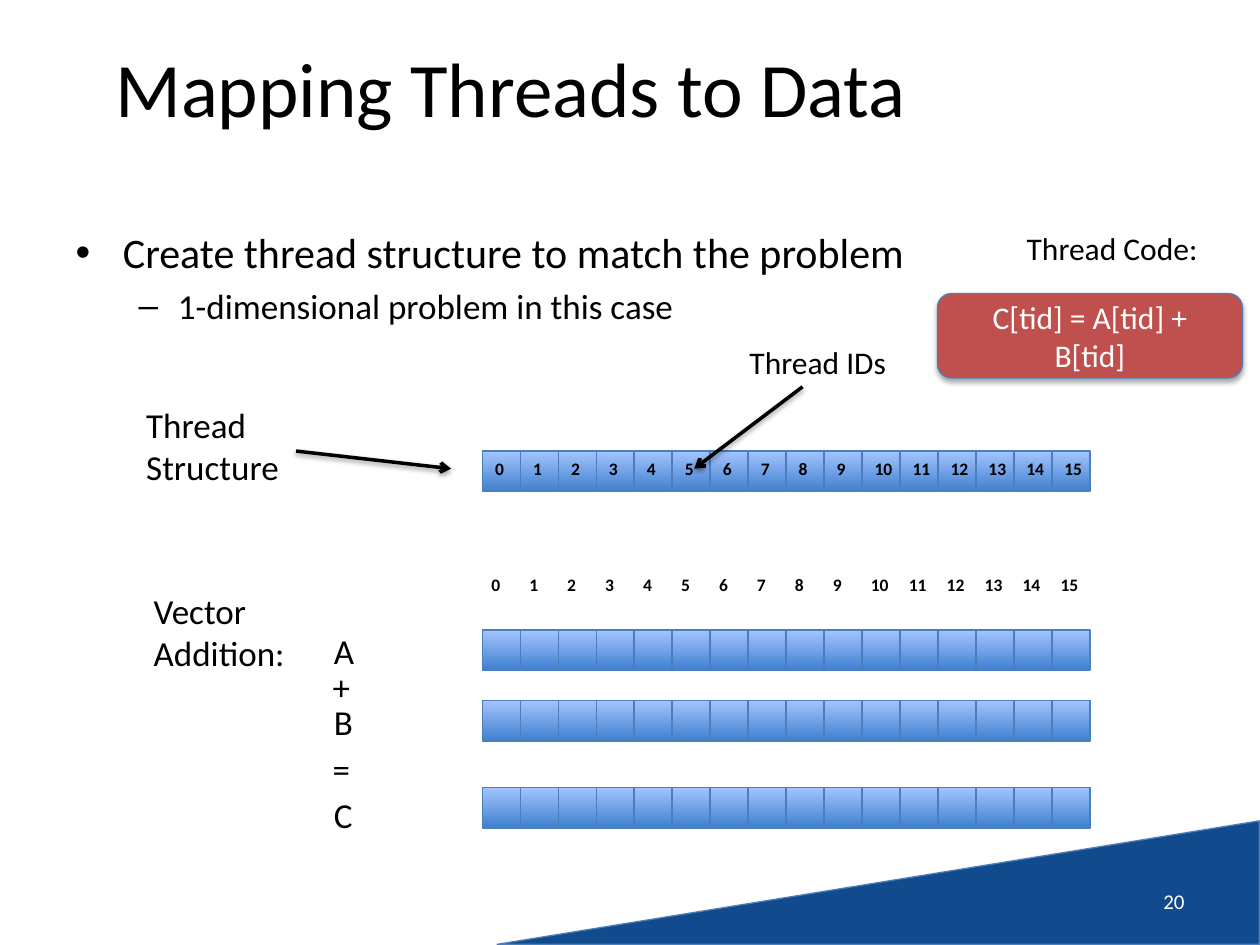
import pptx
import pptx.dml.color
import pptx.enum.shapes
import pptx.enum.text
import pptx.oxml
import pptx.oxml.ns
import pptx.util
from pptx.util import Inches

RGBColor = pptx.dml.color.RGBColor
ShapeType = pptx.enum.shapes.MSO_SHAPE
Align = pptx.enum.text.PP_ALIGN
Anchor = pptx.enum.text.MSO_ANCHOR
AutoSize = pptx.enum.text.MSO_AUTO_SIZE

# Content
TITLE = "Mapping Threads to Data"
BULLETS = [  # text, level, size
    ("Create thread structure to match the problem", 0, 24),
    ("1-dimensional problem in this case", 1, 20),
]
THREAD_COUNT = 16
THREAD_CODE = "C[tid] = A[tid] + B[tid]"
SLIDE_NUMBER = "20"
WRAPPED_LABELS = [  # text, left, top, width
    ("Thread Structure", 1.09, 3.16, 1.51),
    ("Vector Addition:", 1.15, 4.64, 1.74),
]
OPERANDS = [  # text, left, top
    ("A", 2.58, 4.96),
    ("+", 2.57, 5.24),
    ("B", 2.58, 5.52),
    ("=", 2.57, 5.89),
    ("C", 2.58, 6.26),
]
CAPTIONS = [  # text, left, top, width
    ("Thread IDs", 5.85, 2.67, 1.3),
    ("Thread Code:", 8.05, 1.77, 1.57),
]
ARROWS = [((2.35, 3.58), (3.58, 3.72)), ((6.37, 3.07), (5.51, 3.72))]

# Vectors: one thread row and three data rows on the same columns
ROW_LEFT, ROW_WIDTH, CELL_HEIGHT = 3.83, 4.82, 0.32
CELL_WIDTH = ROW_WIDTH / THREAD_COUNT
ROW_TOPS = [3.58, 5.0, 5.56, 6.25]
INDEX_TABLES = [(3.83, 4.52), (3.86, 3.6)]
NO_GRID_STYLE = "{2D5ABB26-0587-4C30-8999-92F81FD0307C}"

FONT = "Calibri"
BLACK = RGBColor(0x00, 0x00, 0x00)
WHITE = RGBColor(0xFF, 0xFF, 0xFF)
NAVY = RGBColor(0x11, 0x4B, 0x8E)
OUTLINE = RGBColor(0x4B, 0x7E, 0xBC)
CELL_DARK = RGBColor(0x3F, 0x80, 0xCE)
CELL_LIGHT = RGBColor(0xA4, 0xC4, 0xFF)
RED = RGBColor(0xC0, 0x50, 0x4D)


def format_text(paragraph, size, color=BLACK, bold=None, align=None):
    font = paragraph.runs[0].font
    font.name, font.size, font.bold = FONT, pptx.util.Pt(size), bold
    font.color.rgb = color
    if align is not None:
        paragraph.alignment = align


def set_small_margins(target):
    target.margin_left = target.margin_right = Inches(0.07)
    target.margin_top = target.margin_bottom = Inches(0.04)


def add_text(slide, text, left, top, width, height, size, wrap=False):
    box = slide.shapes.add_textbox(Inches(left), Inches(top), Inches(width), Inches(height))
    box.text_frame.text = text
    box.text_frame.word_wrap = wrap
    format_text(box.text_frame.paragraphs[0], size)
    return box


def add_shadow(shape, opacity, distance):
    for old in shape._element.spPr.findall(pptx.oxml.ns.qn("a:effectLst")):
        shape._element.spPr.remove(old)
    shape._element.spPr.append(pptx.oxml.parse_xml(
        f'<a:effectLst {pptx.oxml.ns.nsdecls("a")}>'
        f'<a:outerShdw blurRad="{pptx.util.Pt(3.1)}" dist="{pptx.util.Pt(distance)}" '
        'dir="5400000" rotWithShape="0"><a:srgbClr val="000000">'
        f'<a:alpha val="{opacity * 1000}"/></a:srgbClr></a:outerShdw></a:effectLst>'))


def add_solid_shape(slide, kind, left, top, width, height, color):
    shape = slide.shapes.add_shape(kind, Inches(left), Inches(top), Inches(width), Inches(height))
    shape.fill.solid()
    shape.fill.fore_color.rgb = color
    shape.line.color.rgb = OUTLINE
    shape.line.width = pptx.util.Pt(0.75)
    add_shadow(shape, 35, 1.8)
    return shape


def add_vector(slide, top):
    group = slide.shapes.add_group_shape()
    for column in range(THREAD_COUNT):
        cell = group.shapes.add_shape(
            ShapeType.RECTANGLE, Inches(ROW_LEFT + column * CELL_WIDTH), Inches(top),
            Inches(CELL_WIDTH), Inches(CELL_HEIGHT))
        cell.shadow.inherit = False
        cell.fill.gradient()
        cell.fill.gradient_angle = 90
        for stop, color in zip(cell.fill.gradient_stops, (CELL_DARK, CELL_LIGHT)):
            stop.color.rgb = color
        cell.line.color.rgb = OUTLINE
        cell.line.width = pptx.util.Pt(1)


def add_index_table(slide, left, top):
    table = slide.shapes.add_table(1, THREAD_COUNT, Inches(left), Inches(top),
                                   Inches(ROW_WIDTH), Inches(0.3)).table
    table.first_row = table.horz_banding = False
    table._tbl.tblPr.find(pptx.oxml.ns.qn("a:tableStyleId")).text = NO_GRID_STYLE
    for index in range(THREAD_COUNT):
        table.columns[index].width = Inches(CELL_WIDTH)
        cell = table.cell(0, index)
        cell.fill.background()
        set_small_margins(cell)
        cell.text_frame.text = str(index)
        format_text(cell.text_frame.paragraphs[0], 10, bold=True)


def add_arrow(slide, start, end):
    arrow = slide.shapes.add_connector(
        pptx.enum.shapes.MSO_CONNECTOR.STRAIGHT, *map(Inches, start + end))
    arrow.line.color.rgb = BLACK
    arrow.line.width = pptx.util.Pt(2)
    arrow.line._get_or_add_ln().append(pptx.oxml.parse_xml(
        f'<a:tailEnd {pptx.oxml.ns.nsdecls("a")} type="arrow"/>'))
    add_shadow(arrow, 38, 1.6)


def place(shape, left, top, width, height):
    shape.left, shape.top = Inches(left), Inches(top)
    shape.width, shape.height = Inches(width), Inches(height)


def main():
    presentation = pptx.Presentation()
    presentation.slide_width, presentation.slide_height = Inches(10), Inches(7.5)
    slide = presentation.slides.add_slide(presentation.slide_layouts[1])

    # Corner wedge with the slide number
    wedge = add_solid_shape(slide, ShapeType.RIGHT_TRIANGLE, 6.48, 3.98, 0.98, 6.05, NAVY)
    wedge.rotation = 270
    number = add_text(slide, SLIDE_NUMBER, 7.17, 6.95, 2.33, 0.4, 12, wrap=True)
    number.text_frame.vertical_anchor = Anchor.MIDDLE
    format_text(number.text_frame.paragraphs[0], 12, WHITE, align=Align.RIGHT)

    # Title and bullets
    title, body = slide.placeholders
    place(title, 0.5, 0.06, 7.11, 1.25)
    title.text_frame.text = TITLE
    title.text_frame.vertical_anchor = Anchor.MIDDLE
    format_text(title.text_frame.paragraphs[0], 44, align=Align.CENTER)
    place(body, 0.5, 1.75, 9, 1.32)
    body.text_frame.text = "\n".join(text for text, _, _ in BULLETS)
    for frame in (title.text_frame, body.text_frame):
        frame.auto_size = AutoSize.NONE
    for paragraph, (_, level, size) in zip(body.text_frame.paragraphs, BULLETS):
        paragraph.level = level
        format_text(paragraph, size)
    body.text_frame.paragraphs[0].space_before = pptx.util.Pt(0)

    # Vectors and their indices
    for top in ROW_TOPS:
        add_vector(slide, top)
    for left, top in INDEX_TABLES:
        add_index_table(slide, left, top)

    # Labels
    for text, left, top, width in WRAPPED_LABELS:
        set_small_margins(add_text(slide, text, left, top, width, 0.74, 20, wrap=True).text_frame)
    for text, left, top in OPERANDS:
        set_small_margins(add_text(slide, text, left, top, 0.26, 0.74, 20).text_frame)
    for text, left, top, width in CAPTIONS:
        add_text(slide, text, left, top, width, 0.4, 18)
    for start, end in ARROWS:
        add_arrow(slide, start, end)

    # Thread code
    code = add_solid_shape(slide, ShapeType.ROUNDED_RECTANGLE, 7.44, 2.33, 2.42, 0.67, RED)
    code.text_frame.text = THREAD_CODE
    code.text_frame.vertical_anchor = Anchor.MIDDLE
    format_text(code.text_frame.paragraphs[0], 18, WHITE, align=Align.CENTER)

    presentation.save("out.pptx")


if __name__ == "__main__":
    main()
